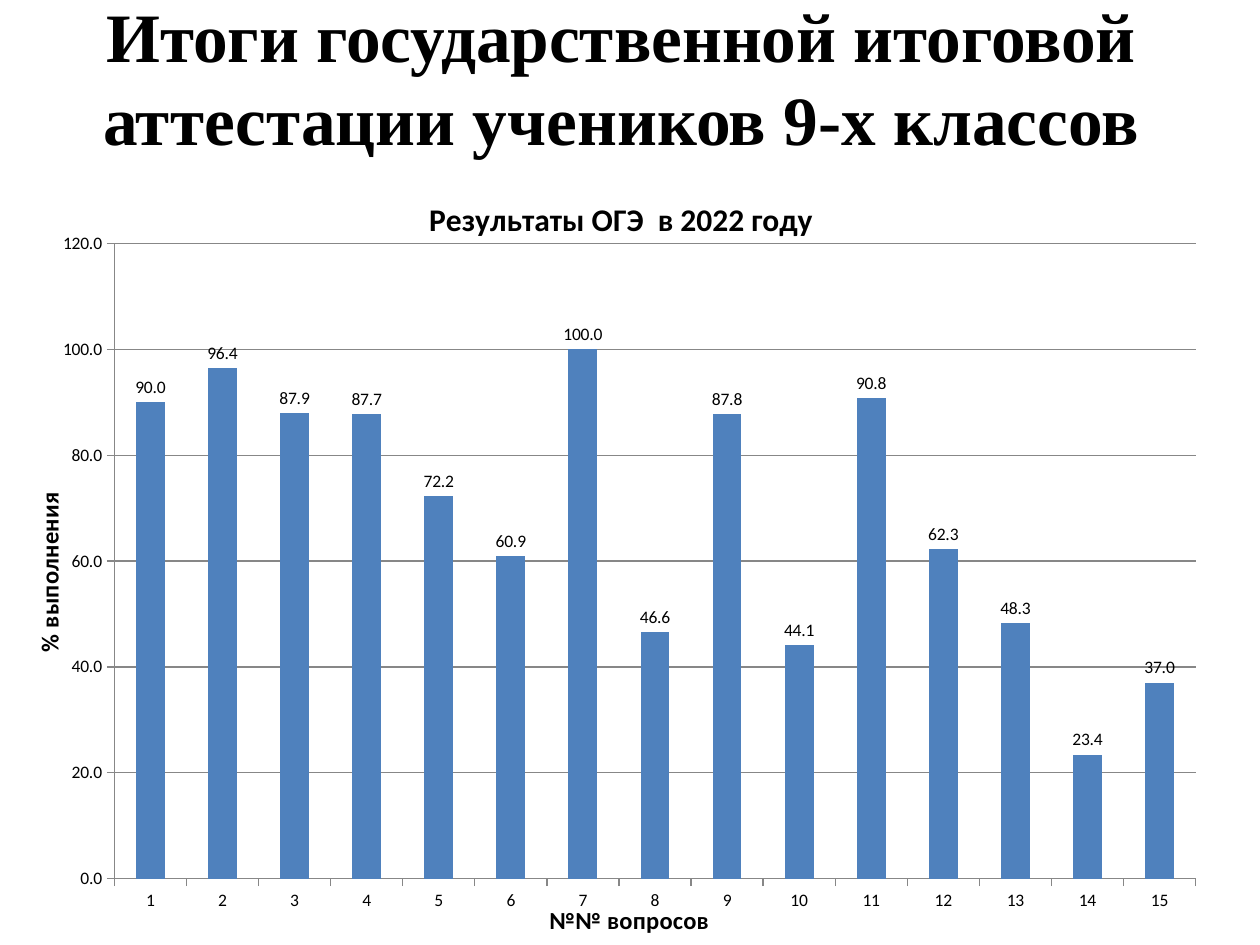
"""Build a slide with a column chart of ninth-grade exam results by question."""
import pptx
import pptx.chart.data
import pptx.dml.color
import pptx.enum.chart
import pptx.enum.text
import pptx.oxml
import pptx.oxml.ns
import pptx.util
from pptx.util import Inches

BLACK = pptx.dml.color.RGBColor(0x00, 0x00, 0x00)
BLUE = pptx.dml.color.RGBColor(0x4F, 0x81, 0xBD)
GRAY = pptx.dml.color.RGBColor(0x87, 0x87, 0x87)
SCORES = [90, 96.4, 87.9, 87.7, 72.2, 60.9, 100, 46.6, 87.8, 44.1, 90.8, 62.3, 48.3, 23.4, 37]
PLOT_AREA = {"x": 0.073, "y": 0.095, "w": 0.911, "h": 0.821}


def apply_format(target, values):
    for attribute, value in values.items():
        setattr(target, attribute, value)


def write_text(frame, text, size, typeface):
    paragraph = frame.paragraphs[0]
    paragraph.alignment = pptx.enum.text.PP_ALIGN.CENTER
    run = paragraph.add_run()
    run.text = text
    run.font.color.rgb = BLACK
    apply_format(run.font, {"size": pptx.util.Pt(size), "name": typeface, "bold": True})


presentation = pptx.Presentation()
presentation.slide_width = Inches(10)
presentation.slide_height = Inches(7.5)
slide = presentation.slides.add_slide(presentation.slide_layouts[6])

heading = slide.shapes.add_textbox(Inches(0.43), Inches(-0.02), Inches(9), Inches(1.25)).text_frame
apply_format(heading, {"word_wrap": True, "vertical_anchor": pptx.enum.text.MSO_ANCHOR.MIDDLE})
write_text(heading, "Итоги государственной итоговой аттестации учеников 9-х классов", 39.6, "Times New Roman")

exam_data = pptx.chart.data.CategoryChartData(number_format="0.0")
exam_data.categories = [str(number) for number in range(1, len(SCORES) + 1)]
exam_data.add_series("Series 1", SCORES)
results = slide.shapes.add_chart(
    pptx.enum.chart.XL_CHART_TYPE.COLUMN_CLUSTERED,
    Inches(0.22), Inches(1.35), Inches(9.42), Inches(6.14), exam_data,
).chart
results.has_legend = False
apply_format(results.font, {"size": pptx.util.Pt(10), "name": "Calibri"})
results.font.color.rgb = BLACK

questions, completion = results.category_axis, results.value_axis
for titled, text, size in [
    (results.chart_title, "Результаты ОГЭ  в 2022 году", 18),
    (questions.axis_title, "№№ вопросов", 14),
    (completion.axis_title, "% выполнения", 14),
]:
    write_text(titled.text_frame, text, size, "Calibri")
results.chart_title.include_in_layout = False

for axis in (questions, completion):
    axis.major_tick_mark = pptx.enum.chart.XL_TICK_MARK.OUTSIDE
    axis.format.line.color.rgb = GRAY
apply_format(completion, {"minimum_scale": 0, "maximum_scale": 120, "major_unit": 20,
                          "has_major_gridlines": True})
completion.major_gridlines.format.line.color.rgb = GRAY
apply_format(completion.tick_labels, {"number_format": "0.0", "number_format_is_linked": False})

columns = results.plots[0]
apply_format(columns, {"gap_width": 150, "vary_by_categories": False, "has_data_labels": True})
apply_format(columns.data_labels, {
    "show_value": True,
    "number_format": "0.0",
    "number_format_is_linked": False,
    "position": pptx.enum.chart.XL_LABEL_POSITION.OUTSIDE_END,
})
score_fill = columns.series[0].format.fill
score_fill.solid()
score_fill.fore_color.rgb = BLUE

plot_area = results.element.chart.plotArea
for old_layout in plot_area.findall(pptx.oxml.ns.qn("c:layout")):
    plot_area.remove(old_layout)
placement = '<c:xMode val="edge"/><c:yMode val="edge"/>' + "".join(
    f'<c:{side} val="{share}"/>' for side, share in PLOT_AREA.items()
)
plot_area.insert(0, pptx.oxml.parse_xml(
    f'<c:layout {pptx.oxml.ns.nsdecls("c")}><c:manualLayout>'
    f'<c:layoutTarget val="inner"/>{placement}</c:manualLayout></c:layout>'
))

presentation.save("out.pptx")
